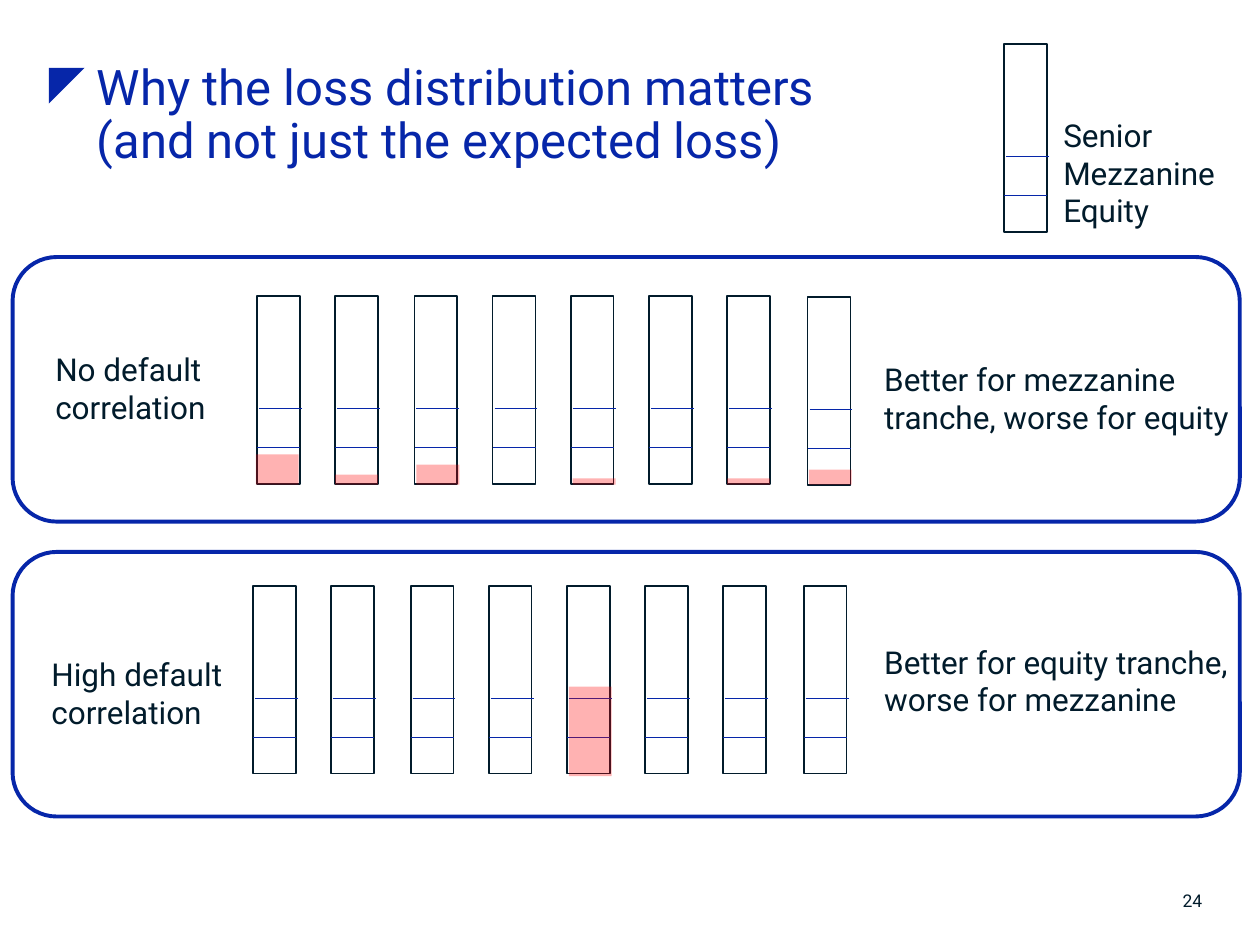
"""Build a slide comparing tranche losses under no and high default correlation."""
from lxml import etree
from pptx import Presentation
from pptx.dml.color import RGBColor
from pptx.enum.shapes import MSO_CONNECTOR, MSO_SHAPE
from pptx.enum.text import MSO_ANCHOR, MSO_AUTO_SIZE, PP_ALIGN
from pptx.oxml.ns import qn
from pptx.util import Pt

RECTANGLE = MSO_SHAPE.RECTANGLE
ROUNDED = MSO_SHAPE.ROUNDED_RECTANGLE
TRIANGLE = MSO_SHAPE.ISOSCELES_TRIANGLE
STRAIGHT = MSO_CONNECTOR.STRAIGHT
TOP, MIDDLE = MSO_ANCHOR.TOP, MSO_ANCHOR.MIDDLE
LEFT, RIGHT = PP_ALIGN.LEFT, PP_ALIGN.RIGHT
GROW, FIXED = MSO_AUTO_SIZE.SHAPE_TO_FIT_TEXT, MSO_AUTO_SIZE.NONE

BLUE = RGBColor(0x06, 0x26, 0xA9)
INK = RGBColor(0x01, 0x1B, 0x2B)
RED = RGBColor(0xFF, 0x00, 0x00)
FONT = "Roboto"

TITLE = ["Why the loss distribution matters", "(and not just the expected loss)"]
TRANCHES = ["Senior", "Mezzanine", "Equity"]
PAGE_NUMBER = "24"

BAR_WIDTH, BAR_HEIGHT = 24.5, 107.3
TRANCHE_LINES = [(0, 86.4), (1.1, 64.1)]
BAR_OFFSETS = [0, 44.6, 90, 134.6, 179.3, 223.9, 268.6, 314.6]
LEGEND_BAR = (573.8, 25.2)
PANEL_LEFT, PANEL_WIDTH, PANEL_HEIGHT = 7.2, 701.3, 151.2

SCENARIOS = [
    {
        "panel_top": 146.9,
        "bars": (146.9, 169.2),
        "last_drop": 0.7,
        "loss_bottom": 277,
        "losses": [(0, -0.7, 17.3), (1, 0, 5.8), (2, 1.1, 11.5),
                   (4, 1.1, 3.6), (6, 0, 3.6), (7, 0.7, 8.6)],
        "label": ("No default correlation", (24.5, 196.6, 102.2, 51.1)),
        "verdict": ("Better for mezzanine tranche, worse for equity",
                    (498.2, 202.3, 218.2, 51.1)),
    },
    {
        "panel_top": 315.4,
        "bars": (144.7, 334.8),
        "last_drop": 0,
        "loss_bottom": 443.5,
        "losses": [(4, 1.1, 51.1)],
        "label": ("High default correlation", (22.3, 370.8, 122.4, 51.1)),
        "verdict": ("Better for equity tranche, worse for mezzanine",
                    (498.2, 363.6, 218.2, 51.1)),
    },
]


def points(values):
    return [Pt(value) for value in values]


def add_shape(page, kind, frame, fill=None, line=None, weight=1):
    shape = page.shapes.add_shape(kind, *points(frame))
    shape.shadow.inherit = False
    if fill is None:
        shape.fill.background()
    else:
        shape.fill.solid()
        shape.fill.fore_color.rgb = fill
    if line is None:
        shape.line.fill.background()
    else:
        shape.line.color.rgb = line
        shape.line.width = Pt(weight)
    return shape


def add_bar(page, left, top):
    add_shape(page, RECTANGLE, (left, top, BAR_WIDTH, BAR_HEIGHT), line=INK)
    for shift, depth in TRANCHE_LINES:
        start, level = left + shift, top + depth
        line = page.shapes.add_connector(
            STRAIGHT, *points((start, level, start + BAR_WIDTH, level)))
        line.line.color.rgb = BLUE
        line.line.width = Pt(0.5)
        etree.SubElement(line._element.spPr, qn("a:effectLst"))


def add_loss(page, left, bottom, height):
    frame = (left, bottom - height, BAR_WIDTH, height)
    loss = add_shape(page, RECTANGLE, frame, fill=RED)
    color = loss._element.spPr.find(qn("a:solidFill"))[0]
    etree.SubElement(color, qn("a:alpha"), val="30000")


def add_span(para, text, size, color):
    span = para.add_run()
    span.text = text
    span.font.name = FONT
    span.font.size = Pt(size)
    span.font.color.rgb = color


def add_text(page, lines, frame, size=18, wrap=True, fit=GROW,
             align=LEFT, anchor=TOP):
    box = page.shapes.add_textbox(*points(frame)).text_frame
    box.word_wrap = wrap
    box.auto_size = fit
    box.vertical_anchor = anchor
    for index, text in enumerate(lines):
        para = box.add_paragraph() if index else box.paragraphs[0]
        para.alignment = align
        add_span(para, text, size, INK)


def add_title(page):
    marker = add_shape(page, TRIANGLE, (18.7, 36.7, 28.8, 14.4), fill=BLUE)
    marker.rotation = 315
    box = page.shapes.add_textbox(*points((48.2, 28.8, 645.8, 46.1))).text_frame
    box.word_wrap = True
    box.margin_top = Pt(7.2)
    para = box.paragraphs[0]
    para.line_spacing = 0.9
    for index, text in enumerate(TITLE):
        if index:
            para.add_line_break()
        add_span(para, text, 28, BLUE)


def add_scenario(page, scenario):
    first, top = scenario["bars"]
    for offset in BAR_OFFSETS:
        drop = scenario["last_drop"] if offset == BAR_OFFSETS[-1] else 0
        add_bar(page, first + offset, top + drop)
    for index, shift, height in scenario["losses"]:
        left = first + BAR_OFFSETS[index] + shift
        add_loss(page, left, scenario["loss_bottom"], height)
    for part in ("label", "verdict"):
        text, frame = scenario[part]
        add_text(page, [text], frame)
    panel = (PANEL_LEFT, scenario["panel_top"], PANEL_WIDTH, PANEL_HEIGHT)
    add_shape(page, ROUNDED, panel, line=BLUE, weight=2.25)


def main():
    deck = Presentation()
    deck.slide_width, deck.slide_height = Pt(720), Pt(540)
    page = deck.slides.add_slide(deck.slide_layouts[6])
    add_title(page)
    add_text(page, [PAGE_NUMBER], (625.7, 500.4, 68.4, 28.8), size=10,
             fit=FIXED, align=RIGHT, anchor=MIDDLE)
    add_bar(page, *LEGEND_BAR)
    add_text(page, TRANCHES, (600.5, 62.6, 101.5, 72.7), wrap=False)
    for scenario in SCENARIOS:
        add_scenario(page, scenario)
    deck.save("out.pptx")


if __name__ == "__main__":
    main()
